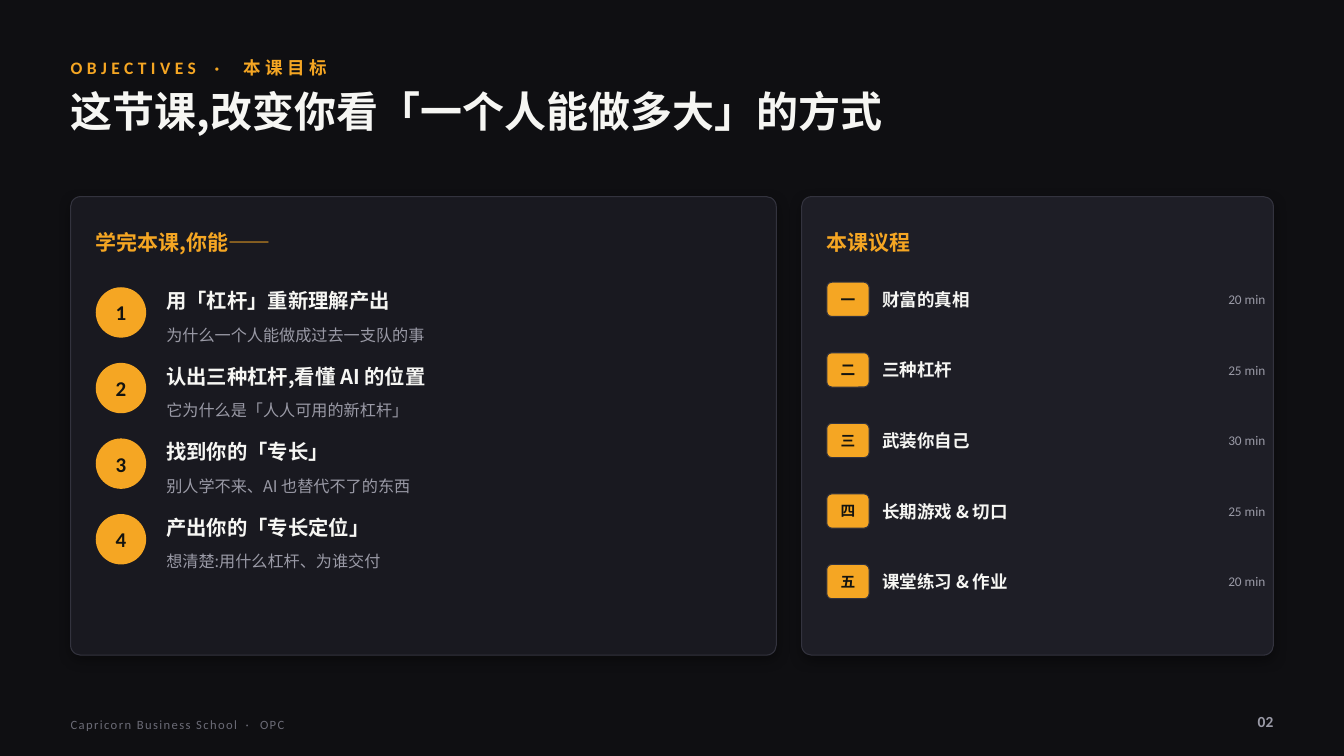
from dataclasses import dataclass

from lxml.etree import SubElement
from pptx import Presentation
from pptx.dml.color import RGBColor
from pptx.enum.shapes import MSO_SHAPE as Preset
from pptx.enum.text import MSO_ANCHOR as Anchor, MSO_AUTO_SIZE as AutoSize, PP_ALIGN as Align
from pptx.oxml.ns import qn
from pptx.shapes.autoshape import Shape
from pptx.slide import Slide
from pptx.util import Inches, Pt

BACKGROUND = RGBColor(0x0F, 0x0F, 0x12)
PANEL_DARK = RGBColor(0x19, 0x19, 0x20)
PANEL_LIGHT = RGBColor(0x1E, 0x1E, 0x26)
BORDER = RGBColor(0x33, 0x33, 0x3E)
AMBER = RGBColor(0xF5, 0xA6, 0x23)
INK = RGBColor(0x14, 0x14, 0x10)
WHITE = RGBColor(0xF6, 0xF6, 0xF3)
GREY = RGBColor(0x9A, 0x9A, 0xA6)
DIM = RGBColor(0x6B, 0x6B, 0x76)

LATIN = "Calibri"
CHINESE = "Noto Sans CJK SC"


@dataclass(frozen=True)
class Area:
    left: float
    top: float
    width: float
    height: float


@dataclass(frozen=True)
class Style:
    size: float
    color: RGBColor
    font: str = CHINESE
    bold: bool = True
    align: Align = Align.LEFT
    anchor: Anchor = Anchor.MIDDLE


@dataclass(frozen=True)
class Span:
    text: str
    spacing: float = 0  # points between characters


@dataclass(frozen=True)
class Goal:
    heading: str
    detail: str


@dataclass(frozen=True)
class Session:
    numeral: str
    topic: str
    minutes: int


KICKER = Style(12.5, AMBER, LATIN)
TITLE = Style(30, WHITE, anchor=Anchor.TOP)
PANEL_HEADING = Style(15, AMBER)
GOAL_NUMBER = Style(15, INK, LATIN, align=Align.CENTER)
GOAL_HEADING = Style(14.5, WHITE)
GOAL_DETAIL = Style(11.5, GREY, bold=False)
NUMERAL = Style(10.5, INK, align=Align.CENTER)
TOPIC = Style(12.5, WHITE)
DURATION = Style(9.5, GREY, LATIN, bold=False, align=Align.RIGHT)
FOOTER = Style(9, DIM, LATIN, bold=False)
PAGE_NUMBER = Style(11, GREY, LATIN, align=Align.RIGHT)

GOALS = [
    Goal("用「杠杆」重新理解产出", "为什么一个人能做成过去一支队的事"),
    Goal("认出三种杠杆,看懂 AI 的位置", "它为什么是「人人可用的新杠杆」"),
    Goal("找到你的「专长」", "别人学不来、AI 也替代不了的东西"),
    Goal("产出你的「专长定位」", "想清楚:用什么杠杆、为谁交付"),
]
SESSIONS = [
    Session("一", "财富的真相", 20),
    Session("二", "三种杠杆", 25),
    Session("三", "武装你自己", 30),
    Session("四", "长期游戏 & 切口", 25),
    Session("五", "课堂练习 & 作业", 20),
]
GOAL_TOP, GOAL_STEP = 2.85, 0.75
SESSION_TOP, SESSION_STEP = 2.8, 0.7


def inches(area: Area) -> tuple:
    return tuple(Inches(v) for v in (area.left, area.top, area.width, area.height))


def write(shape: Shape, style: Style, *spans: Span) -> None:
    """Fill a shape with one paragraph, run by run."""
    frame = shape.text_frame
    frame.word_wrap = True
    frame.auto_size = AutoSize.NONE
    frame.vertical_anchor = style.anchor
    frame.margin_left = frame.margin_top = frame.margin_right = frame.margin_bottom = 0
    para = frame.paragraphs[0]
    para.alignment = style.align
    for span in spans:
        run = para.add_run()
        run.text = span.text
        run.font.size = Pt(style.size)
        run.font.bold = style.bold
        run.font.color.rgb = style.color
        run.font.name = style.font
        properties = run.font._element
        SubElement(properties, qn("a:ea")).set("typeface", CHINESE)
        if span.spacing:
            properties.set("spc", str(round(span.spacing * 100)))


def add_text(page: Slide, area: Area, style: Style, *spans: Span) -> None:
    write(page.shapes.add_textbox(*inches(area)), style, *spans)


def add_block(page: Slide, preset: Preset, area: Area, fill: RGBColor,
              corner: float = 0, outlined: bool = True) -> Shape:
    block = page.shapes.add_shape(preset, *inches(area))
    block.shadow.inherit = False
    block.fill.solid()
    block.fill.fore_color.rgb = fill
    if corner:
        block.adjustments[0] = corner
    if outlined:
        block.line.color.rgb = BORDER
        block.line.width = Pt(0.75)
    else:
        block.line.fill.background()
    return block


def add_panel(page: Slide, area: Area, fill: RGBColor) -> None:
    """Rounded card with a soft shadow below it."""
    panel = add_block(page, Preset.ROUNDED_RECTANGLE, area, fill, corner=0.022)
    effects = panel._element.spPr.find(qn("a:effectLst"))
    shadow = SubElement(effects, qn("a:outerShdw"), blurRad=str(Pt(9)), dist=str(Pt(3)),
                        dir="5400000", algn="ctr", rotWithShape="0")
    color = SubElement(shadow, qn("a:srgbClr"), val="000000")
    SubElement(color, qn("a:alpha"), val="34000")


def add_goal(page: Slide, index: int, goal: Goal) -> None:
    top = GOAL_TOP + index * GOAL_STEP
    disc = add_block(page, Preset.OVAL, Area(0.95, top, 0.5, 0.5), AMBER, outlined=False)
    write(disc, GOAL_NUMBER, Span(str(index + 1)))
    add_text(page, Area(1.65, top - 0.04, 5.8, 0.34), GOAL_HEADING, Span(goal.heading))
    add_text(page, Area(1.65, top + 0.3, 5.8, 0.34), GOAL_DETAIL, Span(goal.detail))


def add_session(page: Slide, index: int, session: Session) -> None:
    top = SESSION_TOP + index * SESSION_STEP
    badge = add_block(page, Preset.ROUNDED_RECTANGLE, Area(8.2, top, 0.42, 0.34), AMBER, corner=0.147)
    write(badge, NUMERAL, Span(session.numeral))
    add_text(page, Area(8.75, top - 0.04, 3, 0.42), TOPIC, Span(session.topic))
    add_text(page, Area(11.7, top - 0.04, 0.85, 0.42), DURATION, Span(f"{session.minutes} min"))


def main() -> None:
    deck = Presentation()
    deck.slide_width, deck.slide_height = Inches(13.33), Inches(7.5)
    page = deck.slides.add_slide(deck.slide_layouts[5])
    page.background.fill.solid()
    page.background.fill.fore_color.rgb = BACKGROUND

    # Header
    add_text(page, Area(0.7, 0.52, 11.93, 0.3), KICKER,
             Span("OBJECTIVES", 3.2), Span(" · ", 7.2), Span("本课目标", 3.2))
    title = page.shapes.title
    title.left, title.top, title.width, title.height = inches(Area(0.7, 0.85, 11.93, 0.9))
    write(title, TITLE, Span("这节课,改变你看「一个人能做多大」的方式"))

    # Learning goals
    add_panel(page, Area(0.7, 1.95, 7, 4.55), PANEL_DARK)
    add_text(page, Area(0.95, 2.2, 6.5, 0.4), PANEL_HEADING, Span("学完本课,你能——"))
    for index, goal in enumerate(GOALS):
        add_goal(page, index, goal)

    # Agenda
    add_panel(page, Area(7.95, 1.95, 4.68, 4.55), PANEL_LIGHT)
    add_text(page, Area(8.2, 2.2, 4, 0.4), PANEL_HEADING, Span("本课议程"))
    for index, session in enumerate(SESSIONS):
        add_session(page, index, session)

    # Footer
    add_text(page, Area(0.7, 7.04, 7, 0.3), FOOTER,
             Span("Capricorn Business School", 1), Span(" · ", 3), Span("OPC", 1))
    add_text(page, Area(11.83, 7, 0.8, 0.32), PAGE_NUMBER, Span("02"))

    deck.save("out.pptx")


if __name__ == "__main__":
    main()
